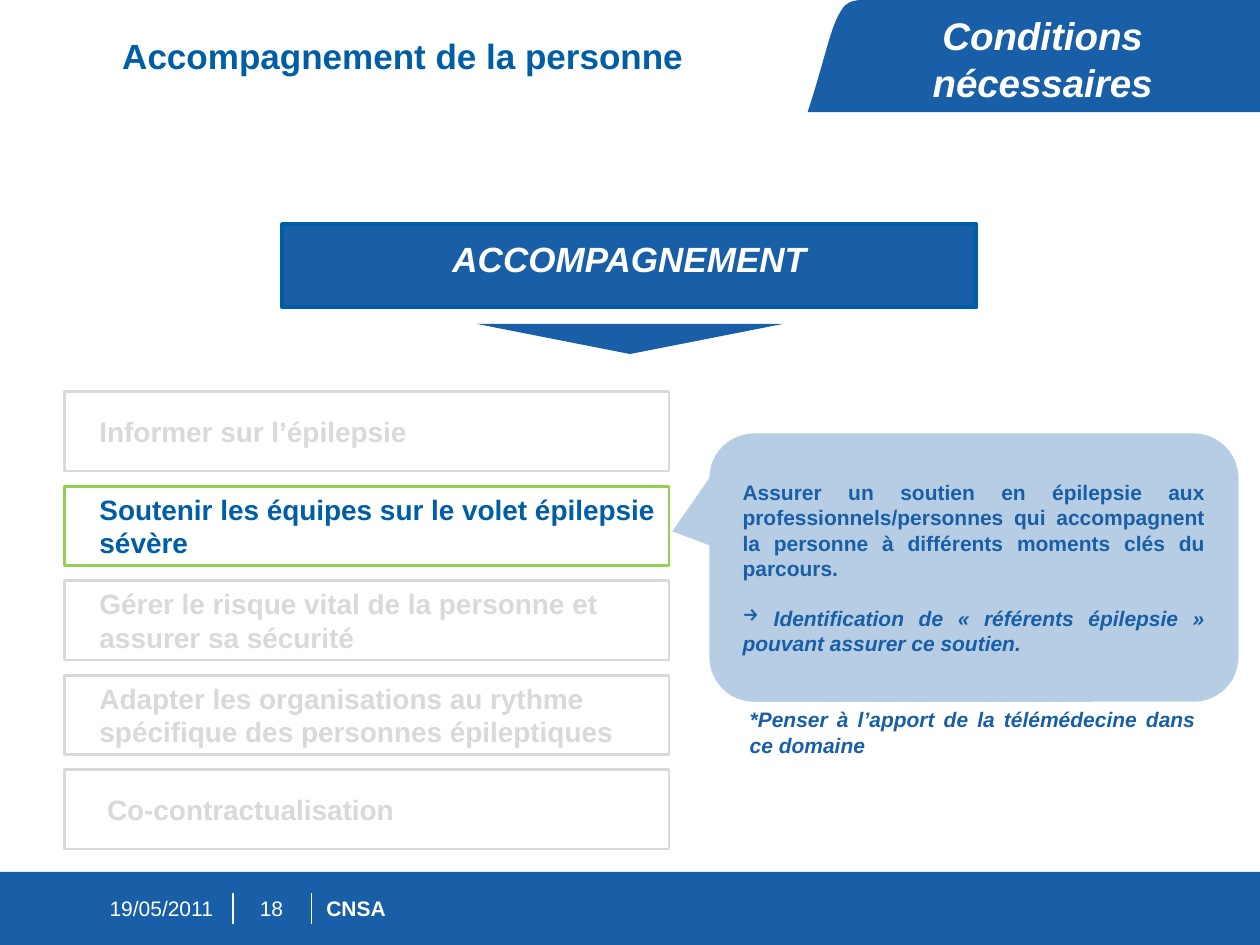
from dataclasses import dataclass, field
from typing import Optional

from lxml.etree import SubElement
from pptx import Presentation
from pptx.dml.color import RGBColor
from pptx.enum.shapes import MSO_CONNECTOR, MSO_SHAPE
from pptx.enum.text import MSO_ANCHOR, MSO_AUTO_SIZE, PP_ALIGN
from pptx.oxml.ns import qn
from pptx.util import Inches, Pt

BLUE, NAVY, WHITE, GREY, GREEN = "195FA7", "005EA7", "FFFFFF", "D9D9D9", "92D050"
WIDE = (0.16, 0.16, 0.16, 0.16)
THIN = (0.1, 0.05, 0.1, 0.05)
NONE = (0, 0, 0, 0)


@dataclass
class Line:
    text: str
    size: float = 12
    color: str = BLUE
    bold: bool = True
    slant: bool = False
    mark: str = ""
    left: float = 0
    form: dict = field(default_factory=dict)


@dataclass
class Step:
    text: str
    edge: str = GREY
    ink: str = GREY
    left: float = 0.2


@dataclass
class Label:
    box: tuple
    line: Line
    pad: tuple = NONE
    anchor: MSO_ANCHOR = MSO_ANCHOR.MIDDLE


def tint(part, code: str) -> None:
    part.rgb = RGBColor.from_string(code)


def place(box: tuple) -> list:
    return [Inches(n) for n in box]


def write(shape, lines: list, pad: tuple, anchor=MSO_ANCHOR.MIDDLE) -> None:
    frame = shape.text_frame
    sides = ("margin_left", "margin_top", "margin_right", "margin_bottom")
    form = {"word_wrap": True, "auto_size": MSO_AUTO_SIZE.NONE, "vertical_anchor": anchor}
    form.update(zip(sides, place(pad)))
    for key, value in form.items():
        setattr(frame, key, value)
    for i, line in enumerate(lines):
        para = frame.add_paragraph() if i else frame.paragraphs[0]
        props = para._p.get_or_add_pPr()
        if line.left:
            props.set("marL", str(Inches(line.left)))
        if line.mark:
            SubElement(props, qn("a:buChar")).set("char", line.mark)
        for key, value in ({"alignment": PP_ALIGN.LEFT} | line.form).items():
            setattr(para, key, value)
        run = para.add_run()
        run.text = line.text
        look = {"name": "Arial", "size": Pt(line.size), "bold": line.bold, "italic": line.slant}
        for key, value in look.items():
            setattr(run.font, key, value)
        tint(run.font.color, line.color)


def paint(shape, fill: str, edge: Optional[str] = None, width: float = 0) -> None:
    shape.shadow.inherit = False
    shape.fill.solid()
    tint(shape.fill.fore_color, fill)
    if edge:
        tint(shape.line.color, edge)
        shape.line.width = Pt(width)
    else:
        shape.line.fill.background()


def draw(slide, kind: MSO_SHAPE, box: tuple, fill: str, edge: Optional[str] = None, width: float = 0):
    shape = slide.shapes.add_shape(kind, *place(box))
    paint(shape, fill, edge, width)
    return shape


def curve(start: tuple, one: tuple, two: tuple, end: tuple, count: int = 12) -> list:
    spots = []
    for n in range(1, count + 1):
        t = n / count
        parts = ((1 - t) ** 3, 3 * t * (1 - t) ** 2, 3 * t * t * (1 - t), t ** 3)
        spots.append(tuple(
            sum(w * p[axis] for w, p in zip(parts, (start, one, two, end)))
            for axis in (0, 1)))
    return spots


def add_tab(slide) -> None:
    spots = [(6.86, 0)]
    spots += curve((6.86, 0), (6.74, 0), (6.73, 0.03), (6.7, 0.05))
    spots += curve((6.7, 0.05), (6.59, 0.19), (6.57, 0.4), (6.41, 0.89))
    spots.append((10, 0.89))
    pen = slide.shapes.build_freeform(Inches(10), 0)
    pen.add_line_segments([place(p) for p in spots], close=True)
    paint(pen.convert_to_shape(), BLUE)


def add_rule(slide, x: float) -> None:
    rule = slide.shapes.add_connector(MSO_CONNECTOR.STRAIGHT, *place((x, 7.09, x, 7.33)))
    tint(rule.line.color, WHITE)
    rule.line.width = Pt(0.75)
    SubElement(rule._element.spPr, qn("a:effectLst"))


def add_label(slide, label: Label) -> None:
    box = slide.shapes.add_textbox(*place(label.box))
    write(box, [label.line], label.pad, label.anchor)


def add_step(slide, step: Step, top: float) -> None:
    shape = draw(slide, MSO_SHAPE.RECTANGLE, (0.51, top, 4.8, 0.63), WHITE, step.edge, 1.5)
    write(shape, [Line(step.text, 16, step.ink, left=step.left)], (0.08, 0, 0.04, 0))


def add_note(slide) -> None:
    note = draw(slide, MSO_SHAPE.ROUNDED_RECTANGULAR_CALLOUT, (5.63, 3.44, 4.2, 2.13), BLUE)
    for i, value in enumerate((-0.57, -0.135, 0.167)):
        note.adjustments[i] = value
    color = note._element.spPr.find(qn("a:solidFill"))[0]
    SubElement(color, qn("a:alpha")).set("val", "31000")
    full = {"alignment": PP_ALIGN.JUSTIFY}
    write(note, [
        Line("Assurer un soutien en épilepsie aux professionnels/personnes qui accompagnent "
             "la personne à différents moments clés du parcours.", form=full),
        Line(" Identification de « référents épilepsie » pouvant assurer ce soutien.",
             slant=True, mark="→", form=full | {"space_before": Pt(14)}),
    ], WIDE)


def main() -> None:
    deck = Presentation()
    deck.slide_width, deck.slide_height = Inches(10), Inches(7.5)
    slide = deck.slides.add_slide(deck.slide_layouts[5])
    mid = {"alignment": PP_ALIGN.CENTER}

    add_tab(slide)
    draw(slide, MSO_SHAPE.RECTANGLE, (0, 6.92, 10, 0.58), BLUE)
    for x in (1.85, 2.47):
        add_rule(slide, x)

    title = slide.shapes.title
    for key, value in zip(("left", "top", "width", "height"), place((0.87, 0.25, 5.43, 0.39))):
        setattr(title, key, value)
    write(title, [Line("Accompagnement de la personne", 20, NAVY, form={"line_spacing": 0.95})],
          THIN, MSO_ANCHOR.TOP)

    head = draw(slide, MSO_SHAPE.RECTANGLE, (2.24, 1.78, 5.51, 0.66), BLUE, NAVY, 2.25)
    write(head, [Line("ACCOMPAGNEMENT", 20, WHITE, slant=True,
                      form=mid | {"line_spacing": Pt(16)})], WIDE)
    arrow = draw(slide, MSO_SHAPE.ISOSCELES_TRIANGLE, (3.78, 2.57, 2.44, 0.24), BLUE)
    arrow.rotation = 180

    steps = [
        Step("Informer sur l’épilepsie"),
        Step("Soutenir les équipes sur le volet épilepsie sévère", GREEN, NAVY),
        Step("Gérer le risque vital de la personne et assurer sa sécurité"),
        Step("Adapter les organisations au rythme spécifique des personnes épileptiques"),
        Step("Co-contractualisation", left=0.26),
    ]
    for i, step in enumerate(steps):
        add_step(slide, step, 3.11 + 0.75 * i)
    add_note(slide)

    labels = [
        Label((6.82, 0.05, 2.91, 0.39),
              Line("Conditions nécessaires", 22, WHITE, slant=True, form=mid),
              THIN, MSO_ANCHOR.TOP),
        Label((5.79, 5.69, 3.86, 0.24),
              Line("*Penser à l’apport de la télémédecine dans ce domaine", slant=True,
                   form={"alignment": PP_ALIGN.JUSTIFY}), WIDE),
        Label((0.87, 7.07, 0.87, 0.27), Line("19/05/2011", color=WHITE, bold=False)),
        Label((1.96, 7.07, 0.39, 0.27), Line("18", color=WHITE, bold=False, form=mid)),
        Label((2.59, 7.07, 4.38, 0.27), Line("CNSA", color=WHITE)),
    ]
    for label in labels:
        add_label(slide, label)
    deck.save("out.pptx")


if __name__ == "__main__":
    main()
